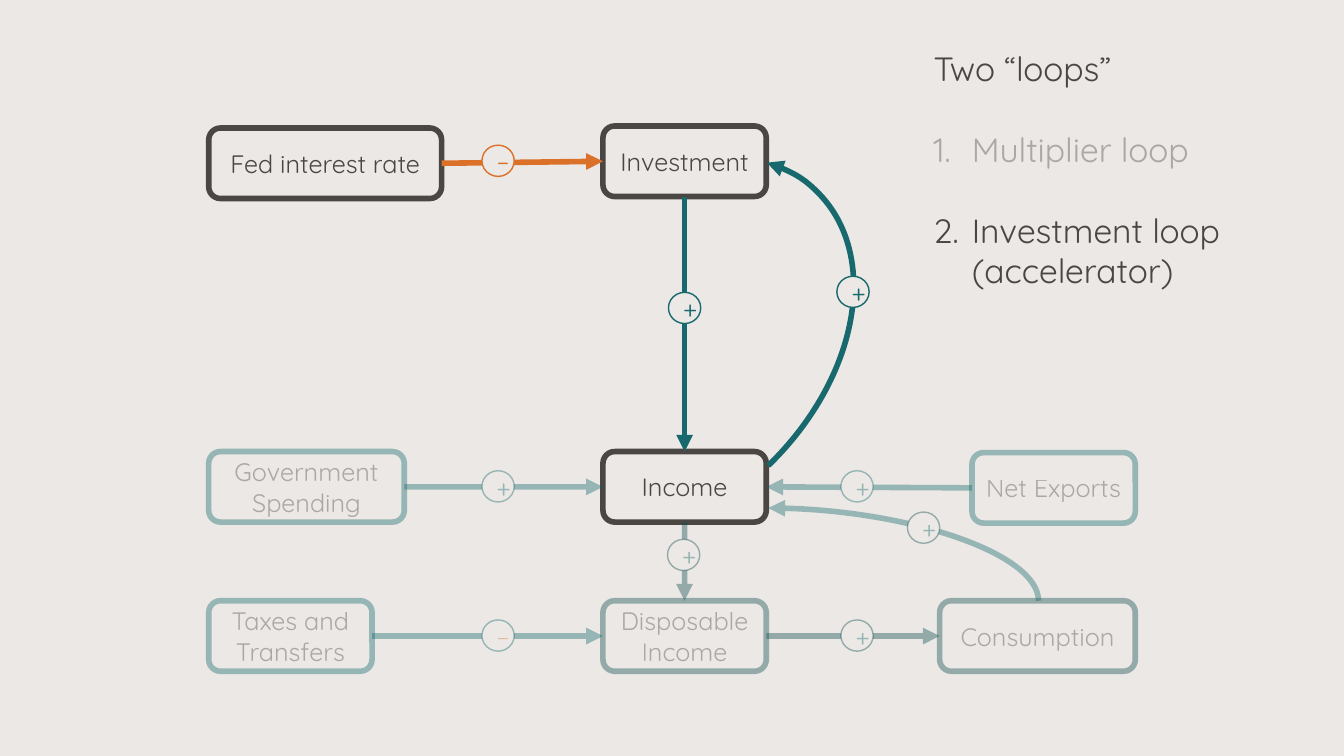
from lxml.etree import SubElement
from pptx import Presentation
from pptx.dml.color import RGBColor
from pptx.enum.shapes import MSO_CONNECTOR, MSO_SHAPE
from pptx.enum.text import MSO_ANCHOR, PP_ALIGN
from pptx.oxml.ns import qn
from pptx.util import Inches, Pt

COLORS = {
    "background": "EBE8E5",
    "text": "494644",
    "teal": "18696D",
    "dark_teal": "124E51",
    "orange": "DB7028",
}
FONT = "Quicksand"
BOX_HEIGHT = 0.7
TOP, LEFT, BOTTOM, RIGHT = range(4)

# name: (left, top, width, line color, faded)
BOXES = {
    "Fed interest rate": (2.07, 1.27, 2.31, "text", False),
    "Investment": (5.98, 1.25, 1.62, "text", False),
    "Government Spending": (2.07, 4.48, 1.94, "teal", True),
    "Income": (5.98, 4.48, 1.62, "text", False),
    "Net Exports": (9.64, 4.49, 1.62, "teal", True),
    "Taxes and Transfers": (2.07, 5.96, 1.62, "teal", True),
    "Disposable Income": (5.98, 5.96, 1.62, "dark_teal", True),
    "Consumption": (9.32, 5.96, 1.94, "dark_teal", True),
}

# from box, side, to box, side, color, faded
ARROWS = [
    ("Fed interest rate", RIGHT, "Investment", LEFT, "orange", False),
    ("Investment", BOTTOM, "Income", TOP, "teal", False),
    ("Government Spending", RIGHT, "Income", LEFT, "teal", True),
    ("Net Exports", LEFT, "Income", RIGHT, "teal", True),
    ("Income", BOTTOM, "Disposable Income", TOP, "dark_teal", True),
    ("Taxes and Transfers", RIGHT, "Disposable Income", LEFT, "teal", True),
    ("Disposable Income", RIGHT, "Consumption", LEFT, "dark_teal", True),
]

# sign, left, top, line color, text color, faded
SIGNS = [
    ("–", 4.78, 1.44, "orange", "orange", False),
    ("+", 6.63, 2.9, "teal", "teal", False),
    ("+", 8.3, 2.74, "teal", "teal", False),
    ("+", 4.78, 4.67, "teal", "teal", True),
    ("+", 8.34, 4.67, "teal", "teal", True),
    ("+", 9, 5.08, "dark_teal", "teal", True),
    ("+", 6.62, 5.35, "dark_teal", "teal", True),
    ("–", 4.78, 6.15, "teal", "orange", True),
    ("+", 8.34, 6.15, "dark_teal", "teal", True),
]


def rgb(color):
    return RGBColor.from_string(COLORS[color])


def fade(element):
    """Make every color inside the element 40% opaque."""
    for color in element.iter(qn("a:srgbClr")):
        SubElement(color, qn("a:alpha"), val="40000")


def style_line(shape, color, width, faded=False, arrow_end=None):
    shape.line.color.rgb = rgb(color)
    shape.line.width = Pt(width)
    line = shape.line._get_or_add_ln()
    if faded:
        fade(line)
    if arrow_end:
        SubElement(line, qn(f"a:{arrow_end}"), type="triangle")


def style_paragraph(paragraph, size, color, faded=False):
    paragraph.font.name = FONT
    paragraph.font.size = Pt(size)
    paragraph.font.color.rgb = rgb(color)
    if faded:
        fade(paragraph._p)


def add_labelled_shape(slide, kind, text, left, top, width, height, color, faded):
    shape = slide.shapes.add_shape(
        kind, Inches(left), Inches(top), Inches(width), Inches(height))
    shape.shadow.inherit = False
    shape.fill.background()
    shape.text_frame.vertical_anchor = MSO_ANCHOR.MIDDLE
    paragraph = shape.text_frame.paragraphs[0]
    paragraph.text = text
    paragraph.alignment = PP_ALIGN.CENTER
    style_paragraph(paragraph, 18, color, faded)
    return shape


def add_box(slide, name, left, top, width, line_color, faded):
    box = add_labelled_shape(slide, MSO_SHAPE.ROUNDED_RECTANGLE, name,
                             left, top, width, BOX_HEIGHT, "text", faded)
    style_line(box, line_color, 4, faded)
    return box


def add_sign(slide, sign, left, top, line_color, text_color, faded):
    circle = add_labelled_shape(slide, MSO_SHAPE.OVAL, sign,
                                left, top, 0.32, 0.31, text_color, faded)
    circle.fill.solid()
    circle.fill.fore_color.rgb = rgb("background")
    style_line(circle, line_color, 1, faded)


def add_connector(slide, kind, start, end, color, faded):
    connector = slide.shapes.add_connector(
        kind, *(Inches(value) for value in (*start, *end)))
    style_line(connector, color, 4, faded, "tailEnd")
    SubElement(connector._element.spPr, qn("a:effectLst"))
    return connector


def add_arrow(slide, source, source_side, target, target_side, color, faded):
    arrow = add_connector(slide, MSO_CONNECTOR.STRAIGHT, (0, 0), (1, 1), color, faded)
    arrow.begin_connect(source, source_side)
    arrow.end_connect(target, target_side)


def add_consumption_curve(slide):
    """Quarter curve from the top of Consumption back to Income."""
    curve = add_connector(slide, MSO_CONNECTOR.CURVE,
                          (8.5, 6.84), (9.42, 4.16), "teal", True)
    properties = curve._element.spPr
    properties.find(qn("a:prstGeom")).set("prst", "curvedConnector2")
    properties.find(qn("a:xfrm")).set("rot", str(270 * 60000))


def add_investment_arc(slide):
    """Arc from Income up to Investment."""
    arc = slide.shapes.add_shape(
        MSO_SHAPE.ARC, Inches(4.95), Inches(1.25), Inches(3.16), Inches(4.45))
    arc.shadow.inherit = False
    arc.fill.background()
    arc.rotation = 45.7
    arc.adjustments[0] = 152.62
    arc.adjustments[1] = 0.46
    style_line(arc, "teal", 4, arrow_end="headEnd")


def add_title(slide, text):
    title = slide.shapes.title
    title.left, title.top = Inches(9.16), Inches(0.43)
    title.width, title.height = Inches(3.89), Inches(0.5)
    title.text_frame.vertical_anchor = MSO_ANCHOR.TOP
    paragraph = title.text_frame.paragraphs[0]
    paragraph.text = text
    paragraph.alignment = PP_ALIGN.LEFT
    style_paragraph(paragraph, 24, "text")


def add_loop_list(slide, loops):
    box = slide.shapes.add_textbox(
        Inches(9.16), Inches(1.23), Inches(3.89), Inches(1.72))
    frame = box.text_frame
    frame.word_wrap = True
    for index, (text, faded) in enumerate(loops):
        paragraph = frame.add_paragraph() if index else frame.paragraphs[0]
        paragraph.text = text
        if index:
            paragraph.space_before = Pt(29)
        properties = paragraph._p.get_or_add_pPr()
        properties.set("marL", str(Inches(0.38)))
        properties.set("indent", str(Inches(-0.38)))
        SubElement(properties, qn("a:buFont"), typeface="+mj-lt")
        SubElement(properties, qn("a:buAutoNum"), type="arabicPeriod")
        style_paragraph(paragraph, 24, "text", faded)


def main():
    presentation = Presentation()
    presentation.slide_width = Inches(13.33)
    presentation.slide_height = Inches(7.5)
    slide = presentation.slides.add_slide(presentation.slide_layouts[5])
    slide.background.fill.solid()
    slide.background.fill.fore_color.rgb = rgb("background")

    # Heading and list
    add_title(slide, "Two “loops”")
    add_loop_list(slide, [("Multiplier loop", True),
                          ("Investment loop (accelerator)", False)])

    # Diagram: boxes, then arrows, then signs on top
    boxes = {name: add_box(slide, name, *values) for name, values in BOXES.items()}
    for source, source_side, target, target_side, color, faded in ARROWS:
        add_arrow(slide, boxes[source], source_side,
                  boxes[target], target_side, color, faded)
    add_consumption_curve(slide)
    add_investment_arc(slide)
    for sign in SIGNS:
        add_sign(slide, *sign)

    presentation.save("out.pptx")


if __name__ == "__main__":
    main()
